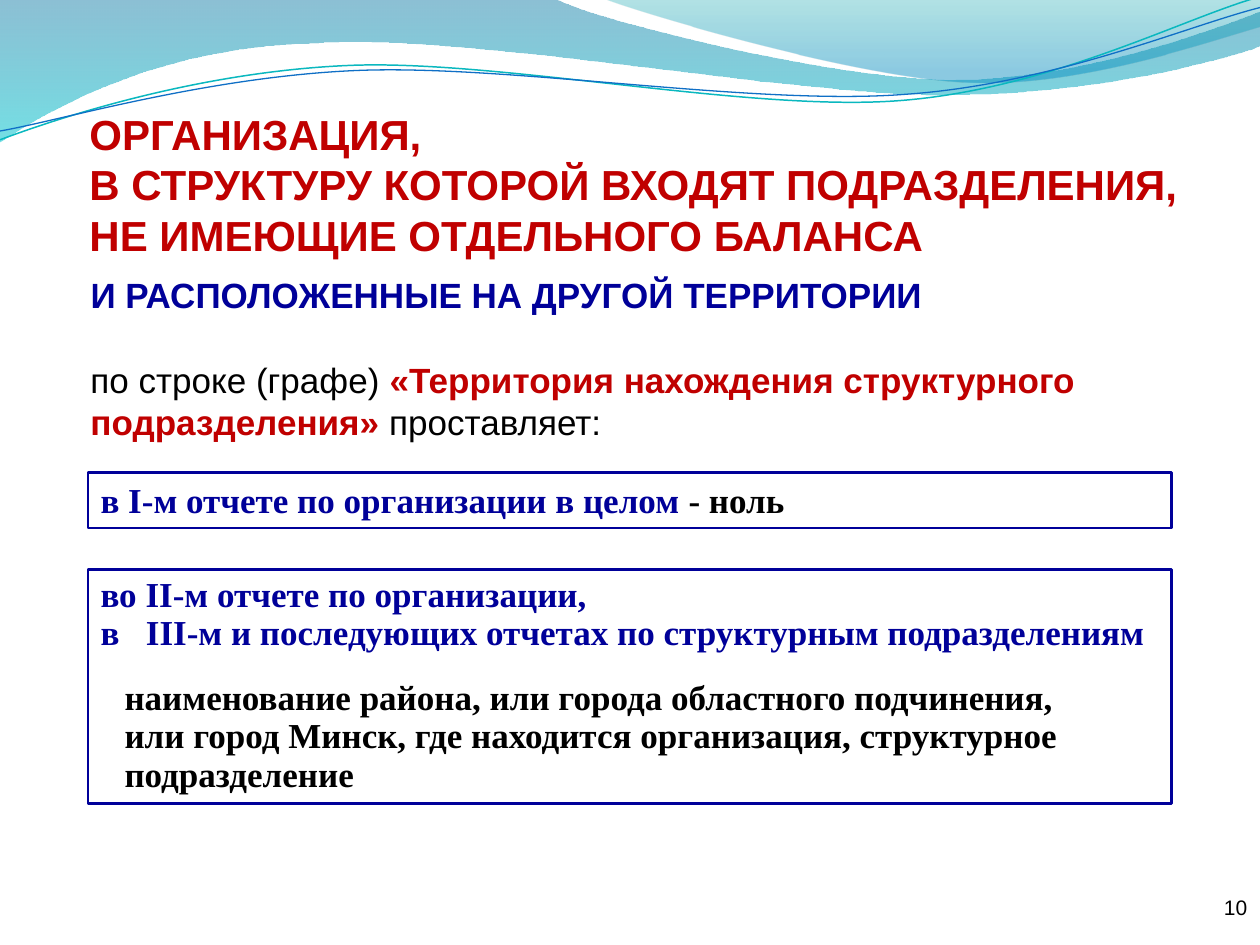
"""Build a slide on the reports of an organisation with divisions elsewhere."""
from lxml import etree
from pptx import Presentation, util as u
from pptx.dml.color import RGBColor
from pptx.enum import shapes, text
from pptx.oxml.ns import qn

THEME = dict(red="C00000", navy="000099", black="000000", teal="0AB8BF", blue="0F6FC6",
             sans="Arial", serif="Times New Roman", head=24, body=20, note=12)

HEAD = [[("ОРГАНИЗАЦИЯ, \vВ СТРУКТУРУ КОТОРОЙ ВХОДЯТ ПОДРАЗДЕЛЕНИЯ, \v"
          "НЕ ИМЕЮЩИЕ ОТДЕЛЬНОГО БАЛАНСА", "red", True)]]
PLACE = [[("И РАСПОЛОЖЕННЫЕ НА ДРУГОЙ ТЕРРИТОРИИ", "navy", True)]]
INTRO = [[("по строке (графе) ", "black", False),
          ("«Территория нахождения структурного подразделения» ", "red", True),
          ("проставляет:", "black", False)]]
FIRST = [[("в I-м отчете по организации в целом ", "navy", True), ("- ноль", "black", True)]]
OTHER = [[("во II-м отчете по организации,", "navy", True)],
         [("в\tIII-м и последующих отчетах по структурным подразделениям", "navy", True)],
         [("наименование района, или города областного подчинения, \v"
           "или город Минск, где находится организация, структурное подразделение",
           "black", True)]]
PAGE = [[("10", "black", False)]]

BANDS = [
    ([(0, 0), (4.4, -0.01), (4.76, 0.17, 6.64, 0.63, 7.58, 0.63),
      (8.53, 0.63, 9.58, 0.26, 10, 0.09), (10.01, 0.36),
      (9.83, 0.44, 8.7, 0.76, 7.46, 0.75), (6.22, 0.75, 3.82, 0.28, 2.57, 0.34),
      (1.29, 0.36, 0.46, 0.83, -0.01, 1.13)],
     [(0, "0074A1", 45), (100, "00C6CF", 55)]),
    ([(4.79, -0.01), (5.09, 0.11, 6.82, 0.62, 7.69, 0.65),
      (8.56, 0.69, 9.61, 0.32, 10, 0.21), (10, 0)],
     [(0, "00A1A9", 30), (80, "008BBF", 45)]),
]
WAVES = [
    ([(0, 1.11), (0.48, 0.93, 1.58, 0.57, 2.77, 0.52), (3.95, 0.47, 5.93, 0.89, 7.13, 0.8),
      (8.33, 0.71, 9.38, 0.15, 9.98, -0.02)], "teal", 0.85),
    ([(0, 1.04), (0.47, 0.96, 1.64, 0.61, 2.83, 0.56), (4.03, 0.51, 5.97, 0.84, 7.17, 0.75),
      (8.36, 0.67, 9.41, 0.21, 10, 0.06)], "blue", 0.75),
]


def tint(name):
    return RGBColor.from_string(THEME[name])


def bend(shape, steps):
    lines = iter(list(shape._element.iter(qn("a:lnTo"))))
    for step in steps:
        group = [next(lines) for _ in range(len(step) // 2)]
        if len(group) == 3:
            cubic = etree.Element(qn("a:cubicBezTo"))
            group[0].addprevious(cubic)
            for line in group:
                cubic.append(line[0])
                line.getparent().remove(line)


def curve(slide, steps, close):
    pts = [(u.Inches(s[i]), u.Inches(s[i + 1])) for s in steps for i in range(0, len(s), 2)]
    form = slide.shapes.build_freeform(*pts[0])
    form.add_line_segments(pts[1:], close=close)
    shape = form.convert_to_shape()
    bend(shape, steps[1:])
    shape.shadow.inherit = False
    shape.fill.background()
    return shape


def band(slide, steps, stops):
    shape = curve(slide, steps, True)
    shape.line.fill.background()
    props = shape._element.spPr
    grad = etree.Element(qn("a:gradFill"), rotWithShape="1")
    row = etree.SubElement(grad, qn("a:gsLst"))
    for pos, color, alpha in stops:
        stop = etree.SubElement(row, qn("a:gs"), pos=str(pos * 1000))
        rgb = etree.SubElement(stop, qn("a:srgbClr"), val=color)
        etree.SubElement(rgb, qn("a:alpha"), val=str(alpha * 1000))
    etree.SubElement(grad, qn("a:lin"), ang="5400000", scaled="0")
    props.replace(props.find(qn("a:noFill")), grad)


def wave(slide, steps, color, width):
    shape = curve(slide, steps, False)
    shape.line.color.rgb = tint(color)
    shape.line.width = u.Pt(width)


def write(shape, paras, font="sans", size="body", align="LEFT", anchor="TOP", lead=None):
    frame = shape.text_frame
    frame.word_wrap = True
    frame.auto_size = text.MSO_AUTO_SIZE.NONE
    frame.vertical_anchor = text.MSO_ANCHOR[anchor]
    for i, runs in enumerate(paras):
        para = frame.add_paragraph() if i else frame.paragraphs[0]
        para.alignment = text.PP_ALIGN[align]
        if lead:
            para.line_spacing = u.Pt(lead)
        for words, color, bold in runs:
            for j, part in enumerate(words.split("\v")):
                if j:
                    para.add_line_break()
                run = para.add_run()
                run.text = part
                run.font.name, run.font.size = THEME[font], u.Pt(THEME[size])
                run.font.bold, run.font.color.rgb = bold, tint(color)
    return frame


def label(slide, box, paras, **look):
    return write(slide.shapes.add_textbox(*map(u.Inches, box)), paras, **look)


def panel(slide, top, high, paras, **look):
    box = map(u.Inches, (0.7, top, 8.6, high))
    shape = slide.shapes.add_shape(shapes.MSO_SHAPE.RECTANGLE, *box)
    shape.shadow.inherit = False
    shape.fill.background()
    shape.line.color.rgb = tint("navy")
    shape.line.width = u.Pt(1.5)
    return write(shape, paras, font="serif", **look)


def main():
    deck = Presentation()
    deck.slide_width, deck.slide_height = u.Inches(10), u.Inches(7.5)
    slide = deck.slides.add_slide(deck.slide_layouts[5])
    for steps, stops in BANDS:
        band(slide, steps, stops)
    for steps, color, width in WAVES:
        wave(slide, steps, color, width)

    title = slide.shapes.title
    slide.shapes._spTree.append(title._element)
    title.left, title.top, title.width, title.height = map(u.Inches, (0.61, 0.81, 9.14, 1.31))
    write(title, HEAD, size="head")
    label(slide, (0.62, 2.8, 8.83, 0.77), INTRO)

    _, tabbed, last = panel(slide, 4.52, 1.86, OTHER, lead=22).paragraphs
    tabs = etree.SubElement(tabbed._p.get_or_add_pPr(), qn("a:tabLst"))
    etree.SubElement(tabs, qn("a:tab"), pos=str(u.Inches(0.36)), algn="l")
    last.space_before = u.Pt(15)
    last._p.get_or_add_pPr().set("marL", str(u.Inches(0.19)))

    panel(slide, 3.75, 0.44, FIRST)
    page = label(slide, (9.07, 6.9, 0.83, 0.4), PAGE, size="note", align="RIGHT", anchor="BOTTOM")
    page.margin_left = page.margin_right = page.margin_top = page.margin_bottom = 0
    label(slide, (0.62, 2.12, 8.98, 0.44), PLACE)
    deck.save("out.pptx")


if __name__ == "__main__":
    main()
